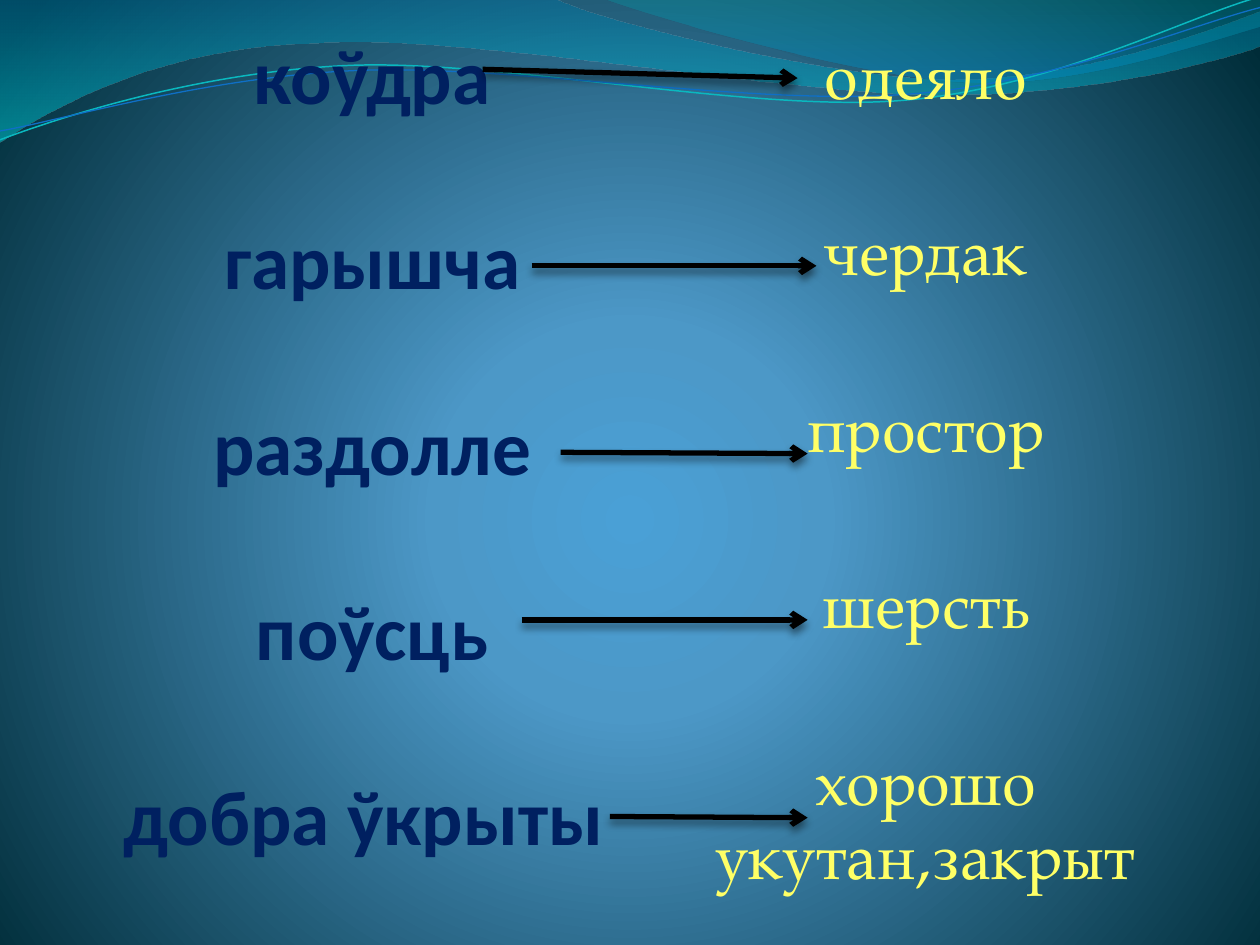
from lxml import etree
from pptx import Presentation
from pptx.dml.color import RGBColor
from pptx.enum.shapes import MSO_CONNECTOR as Connector
from pptx.enum.text import MSO_ANCHOR as Anchor, MSO_AUTO_SIZE as AutoSize, PP_ALIGN as Align
from pptx.oxml import parse_xml
from pptx.util import Inches, Pt

A = "http://schemas.openxmlformats.org/drawingml/2006/main"
P = "http://schemas.openxmlformats.org/presentationml/2006/main"
COLORS = {"belarusian": "002060", "russian": "FFFF66", "arrow": "000000",
          "cyan": "0AB8BF", "blue": "0F6FC6"}

# Content: Belarusian word, Russian word, arrow start and end
WORDS = [
    ("коўдра", "одеяло", (3.83, 0.55), (6.33, 0.62)),
    ("гарышча", "чердак", (4.22, 2.11), (6.48, 2.11)),
    ("раздолле", "простор", (4.45, 3.59), (6.41, 3.6)),
    ("поўсць", "шерсть", (4.14, 4.92), (6.41, 4.92)),
    ("добра ўкрыты ", "хорошо укутан,закрыт", (4.84, 6.48), (6.41, 6.49)),
]
COLUMNS = [
    dict(box=(0.62, 0.39, 4.69, 8.13), anchor=Anchor.BOTTOM, insets=(0, 0, 0.02, 1.69),
         gap=52.8, line=None,
         font=dict(name="Calibri", size=Pt(44.1), bold=True), color="belarusian"),
    dict(box=(5.31, 0.23, 4.14, 6.88), anchor=Anchor.TOP, insets=(0, 0.07, 0.06, 0.05),
         gap=58.6, line=Pt(42.3),
         font=dict(name="TeX Gyre Pagella", size=Pt(36), bold=False), color="russian"),
]

# Gradient stops: position, colour, opacity (percent)
BACKGROUND = [(0, "4AA0D6", 100), (25, "4C98C7", 100), (100, "002C38", 100)]
CENTRE = ('<a:path path="circle"><a:fillToRect l="10000" t="110000" '
          'r="10000" b="100000"/></a:path>')
DOWNWARD = '<a:lin ang="5400000" scaled="0"/>'

# Waves: start, then two numbers for a straight step or six for a Bézier curve
BANDS = [
    ([(0, 0), (4.4, -0.01), (4.76, 0.17, 6.64, 0.63, 7.58, 0.63),
      (8.53, 0.63, 9.58, 0.26, 10, 0.09), (10.01, 0.36),
      (9.83, 0.44, 8.7, 0.76, 7.46, 0.75), (6.22, 0.75, 3.82, 0.28, 2.57, 0.34),
      (1.29, 0.36, 0.46, 0.83, -0.01, 1.13)],
     [(0, "0074A1", 45), (100, "00C6CF", 55)]),
    ([(4.79, -0.01), (5.09, 0.11, 6.82, 0.62, 7.69, 0.65),
      (8.56, 0.69, 9.61, 0.32, 10, 0.21), (10, 0)],
     [(0, "00A1A9", 30), (80, "008BBF", 45)]),
]
STRANDS = [
    ([(0, 1.11), (0.48, 0.93, 1.58, 0.57, 2.77, 0.52), (3.95, 0.47, 5.93, 0.89, 7.13, 0.8),
      (8.33, 0.71, 9.38, 0.15, 9.98, -0.02)], "cyan", 0.85),
    ([(0, 1.04), (0.47, 0.96, 1.64, 0.61, 2.83, 0.56), (4.03, 0.51, 5.97, 0.84, 7.17, 0.75),
      (8.36, 0.67, 9.41, 0.21, 10, 0.06)], "blue", 0.75),
]


def rgb(name):
    return RGBColor.from_string(COLORS[name])


def gradient(stops, direction):
    marks = "".join(
        f'<a:gs pos="{pos * 1000}"><a:srgbClr val="{color}">'
        f'<a:alpha val="{opacity * 1000}"/></a:srgbClr></a:gs>'
        for pos, color, opacity in stops)
    return (f'<a:gradFill xmlns:a="{A}" rotWithShape="1"><a:gsLst>{marks}</a:gsLst>'
            f'{direction}</a:gradFill>')


def add_wave(page, steps, close):
    points = [(Inches(step[i]), Inches(step[i + 1]))
              for step in steps for i in range(0, len(step), 2)]
    builder = page.shapes.build_freeform(*points[0], scale=1.0)
    builder.add_line_segments(points[1:], close=close)
    wave = builder.convert_to_shape()
    wave.shadow.inherit = False

    # Join each curve's three straight segments into one Bézier segment
    segments = iter(list(wave.element.iter(f"{{{A}}}lnTo")))
    for step in steps[1:]:
        parts = [next(segments) for _ in range(len(step) // 2)]
        if len(parts) == 3:
            curve = etree.Element(f"{{{A}}}cubicBezTo")
            parts[0].addprevious(curve)
            for part in parts:
                curve.append(part[0])
                part.getparent().remove(part)
    return wave


def fill_column(box, words, style):
    box.left, box.top, box.width, box.height = map(Inches, style["box"])
    frame = box.text_frame
    left, top, right, bottom = map(Inches, style["insets"])
    settings = dict(word_wrap=True, auto_size=AutoSize.NONE, vertical_anchor=style["anchor"],
                    margin_left=left, margin_top=top, margin_right=right, margin_bottom=bottom)
    for key, value in settings.items():
        setattr(frame, key, value)
    for index, word in enumerate(words):
        para = frame.add_paragraph() if index else frame.paragraphs[0]
        para.alignment = Align.CENTER
        para.space_before = Pt(style["gap"] if index else 0)
        para.line_spacing = style["line"] or 1.0
        span = para.add_run()
        span.text = word
        for key, value in style["font"].items():
            setattr(span.font, key, value)
        span.font.color.rgb = rgb(style["color"])


def add_arrow(page, start, end):
    arrow = page.shapes.add_connector(Connector.STRAIGHT, *map(Inches, start + end))
    arrow.line.color.rgb = rgb("arrow")
    arrow.line.width = Pt(3)
    etree.SubElement(arrow.line._get_or_add_ln(), f"{{{A}}}tailEnd", type="arrow")
    arrow.element.spPr.append(parse_xml(
        f'<a:effectLst xmlns:a="{A}"><a:outerShdw blurRad="{Pt(4.5)}" dist="{Pt(3)}" '
        f'dir="5400000" rotWithShape="0"><a:srgbClr val="{COLORS["arrow"]}">'
        '<a:alpha val="48000"/></a:srgbClr></a:outerShdw></a:effectLst>'))


def main():
    deck = Presentation()
    deck.slide_width, deck.slide_height = Inches(10), Inches(7.5)
    page = deck.slides.add_slide(deck.slide_layouts[0])
    columns = list(page.placeholders)

    # Background
    page.element.cSld.insert(0, parse_xml(
        f'<p:bg xmlns:p="{P}" xmlns:a="{A}"><p:bgPr>{gradient(BACKGROUND, CENTRE)}'
        '<a:effectLst/></p:bgPr></p:bg>'))

    # Waves along the top
    for steps, stops in BANDS:
        band = add_wave(page, steps, close=True)
        band.line.fill.background()
        band.element.spPr.find(f"{{{A}}}custGeom").addnext(
            parse_xml(gradient(stops, DOWNWARD)))
    for steps, color, width in STRANDS:
        strand = add_wave(page, steps, close=False)
        strand.fill.background()
        strand.line.color.rgb = rgb(color)
        strand.line.width = Pt(width)

    # Word columns, in front of the waves
    for index, (box, style) in enumerate(zip(columns, COLUMNS)):
        box.element.getparent().append(box.element)
        fill_column(box, [row[index] for row in WORDS], style)

    # Arrows from word to translation
    for _, _, start, end in WORDS:
        add_arrow(page, start, end)

    deck.save("out.pptx")


if __name__ == "__main__":
    main()
